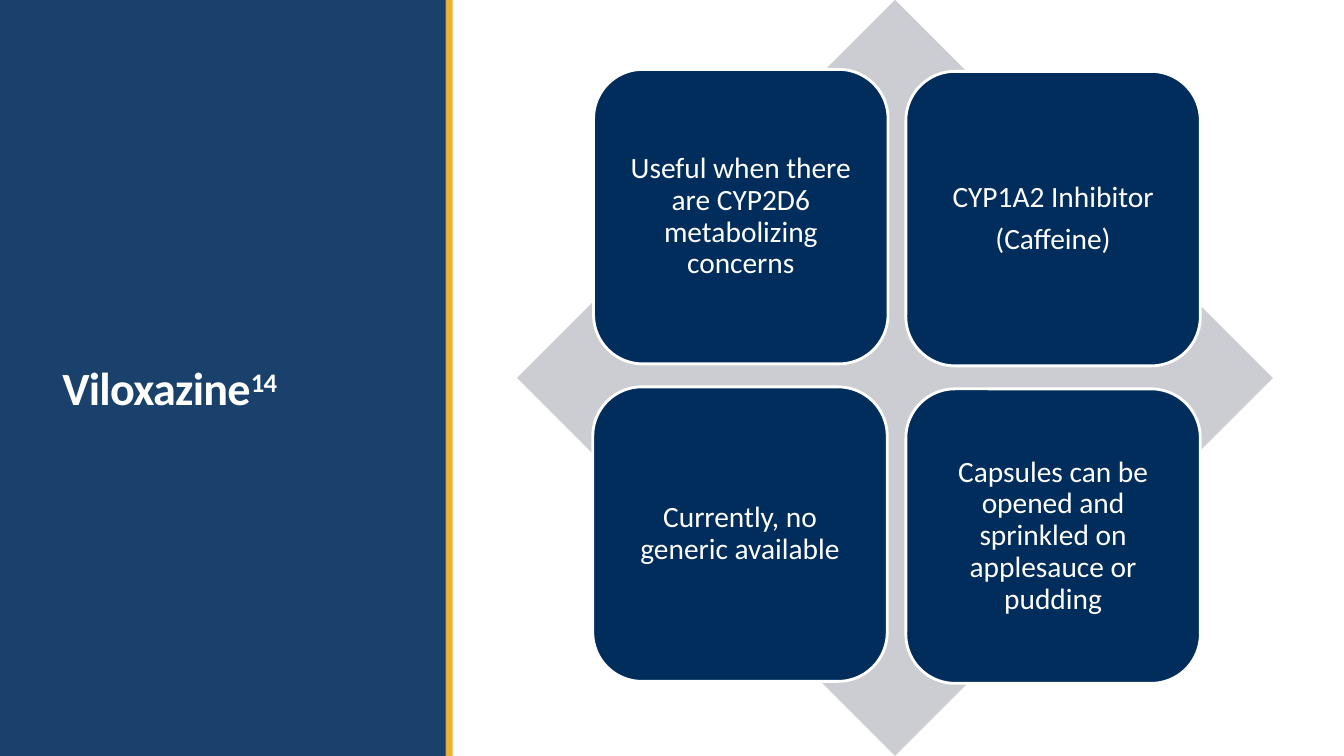
from pptx import Presentation
from pptx.dml.color import RGBColor
from pptx.enum.shapes import MSO_SHAPE
from pptx.enum.text import MSO_ANCHOR, PP_ALIGN
from pptx.oxml.ns import qn
from pptx.util import Cm, Pt
from lxml.etree import SubElement

# Content: each paragraph is a list of (text, run attributes)
TITLE = [[("Viloxazine", {"spc": "-50"}), ("14", {"spc": "-50", "baseline": "30000"})]]
TILES = [  # left and top in cm, then the paragraphs
    (14.94, 9.75, ["Currently, no generic available"]),
    (22.83, 1.8, ["CYP1A2 Inhibitor", "(Caffeine)"]),
    (14.96, 1.75, ["Useful when there are CYP2D6 metabolizing concerns"]),
    (22.83, 9.8, ["Capsules can be opened and sprinkled on applesauce or pudding"]),
]
COLORS = {"navy": "002D5B", "gold": "E9AA21", "gray": "CCCDD2", "white": "FFFFFF"}
SLIDE_W, SLIDE_H = 33.87, 19.05
PANEL_W, STRIPE_LEFT, STRIPE_W = 11.25, 11.23, 0.18
DIAMOND_LEFT = 13.03
TILE = 7.42
INSET = 0.23


def color(name):
    return RGBColor.from_string(COLORS[name])


def add_block(slide, kind, box, fill, alpha=None, line=None):
    sp = slide.shapes.add_shape(kind, *[Cm(v) for v in box])
    sp.shadow.inherit = False
    sp.fill.solid()
    sp.fill.fore_color.rgb = color(fill)
    if alpha:
        clr = sp._element.spPr.find(qn("a:solidFill"))[0]
        SubElement(clr, qn("a:alpha")).set("val", str(alpha * 1000))
    if line:
        sp.line.color.rgb = color(line)
        sp.line.width = Pt(2)
    else:
        sp.line.fill.background()
    return sp


def write(sp, paragraphs, size, bold=False, align=PP_ALIGN.LEFT,
          anchor=MSO_ANCHOR.MIDDLE, spacing=0.9, after=0, inset=None):
    tf = sp.text_frame
    tf.word_wrap = True
    tf.vertical_anchor = anchor
    if inset is not None:
        tf.margin_left = tf.margin_right = tf.margin_top = tf.margin_bottom = Cm(inset)
    for i, runs in enumerate(paragraphs):
        p = tf.add_paragraph() if i else tf.paragraphs[0]
        p.alignment = align
        p.line_spacing = spacing
        p.space_after = Pt(after)
        for text, attributes in runs:
            r = p.add_run()
            r.text = text
            r.font.name = "Calibri"
            r.font.size = Pt(size)
            r.font.bold = bold
            r.font.color.rgb = color("white")
            for key, value in attributes.items():
                r.font._element.set(key, value)


prs = Presentation()
prs.slide_width, prs.slide_height = Cm(SLIDE_W), Cm(SLIDE_H)
slide = prs.slides.add_slide(prs.slide_layouts[6])

# Side panel with gold stripe
add_block(slide, MSO_SHAPE.RECTANGLE, (0, 0, PANEL_W, SLIDE_H), "navy", alpha=90)
add_block(slide, MSO_SHAPE.RECTANGLE, (STRIPE_LEFT, 0, STRIPE_W, SLIDE_H), "gold", alpha=90)

# Title
title = slide.shapes.add_textbox(Cm(1.32), Cm(4.24), Cm(8.89), Cm(6.35))
write(title, TITLE, 33, bold=True, anchor=MSO_ANCHOR.BOTTOM, spacing=0.85)

# Diamond behind four tiles
add_block(slide, MSO_SHAPE.DIAMOND, (DIAMOND_LEFT, 0, SLIDE_H, SLIDE_H), "gray")
for left, top, lines in TILES:
    tile = add_block(slide, MSO_SHAPE.ROUNDED_RECTANGLE, (left, top, TILE, TILE),
                     "navy", line="white")
    write(tile, [[(text, {})] for text in lines], 21, align=PP_ALIGN.CENTER,
          after=7.35, inset=INSET)

prs.save("out.pptx")
